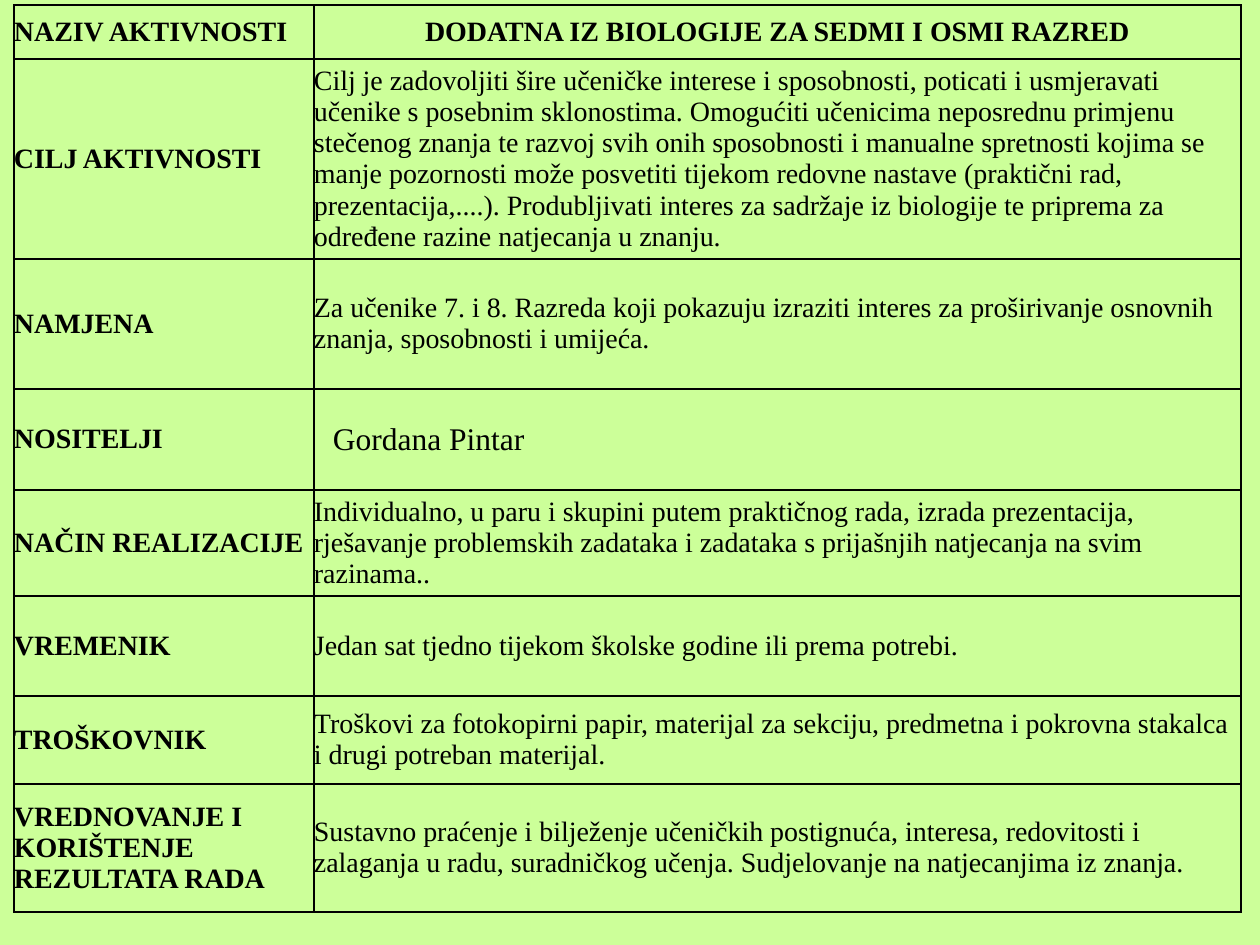
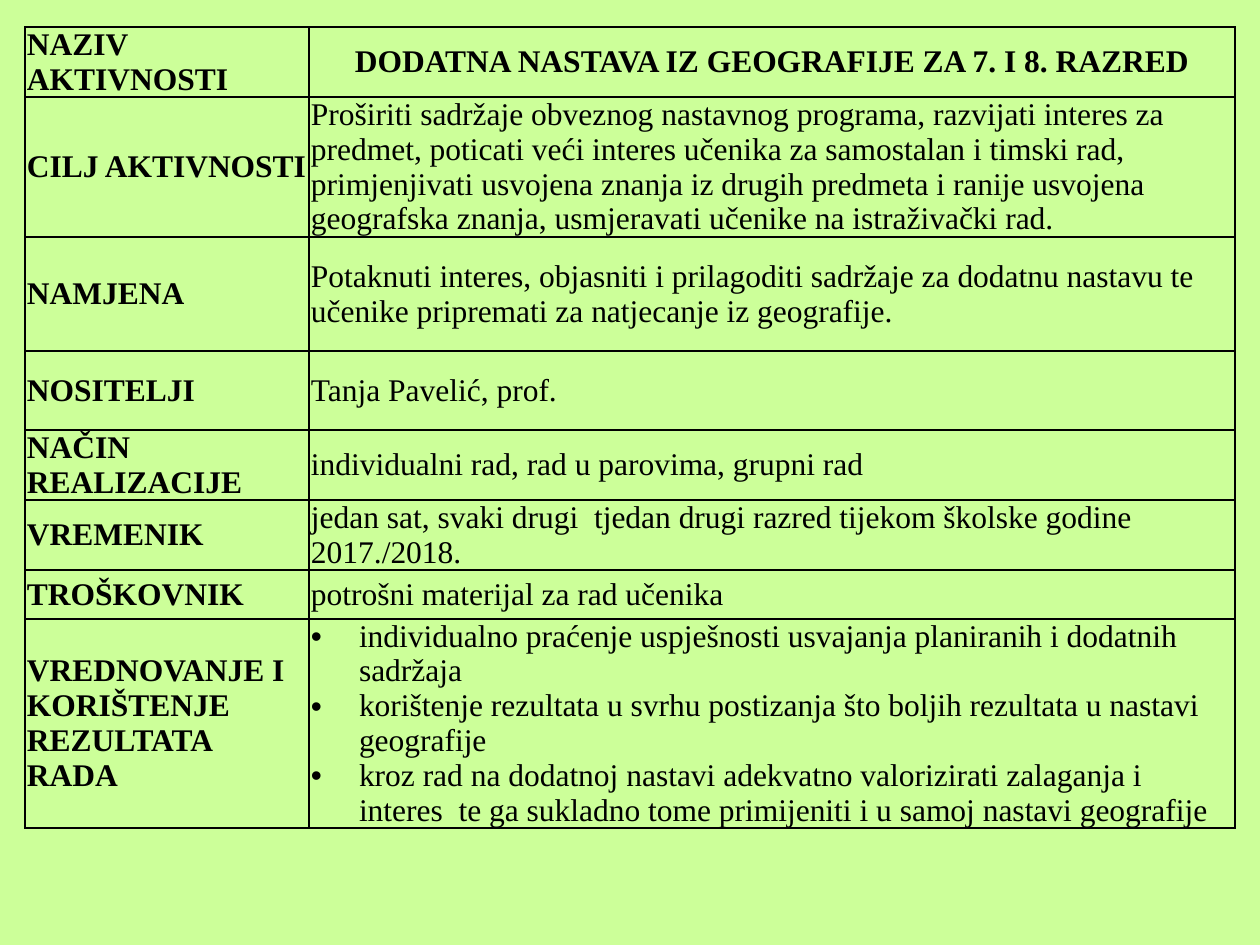
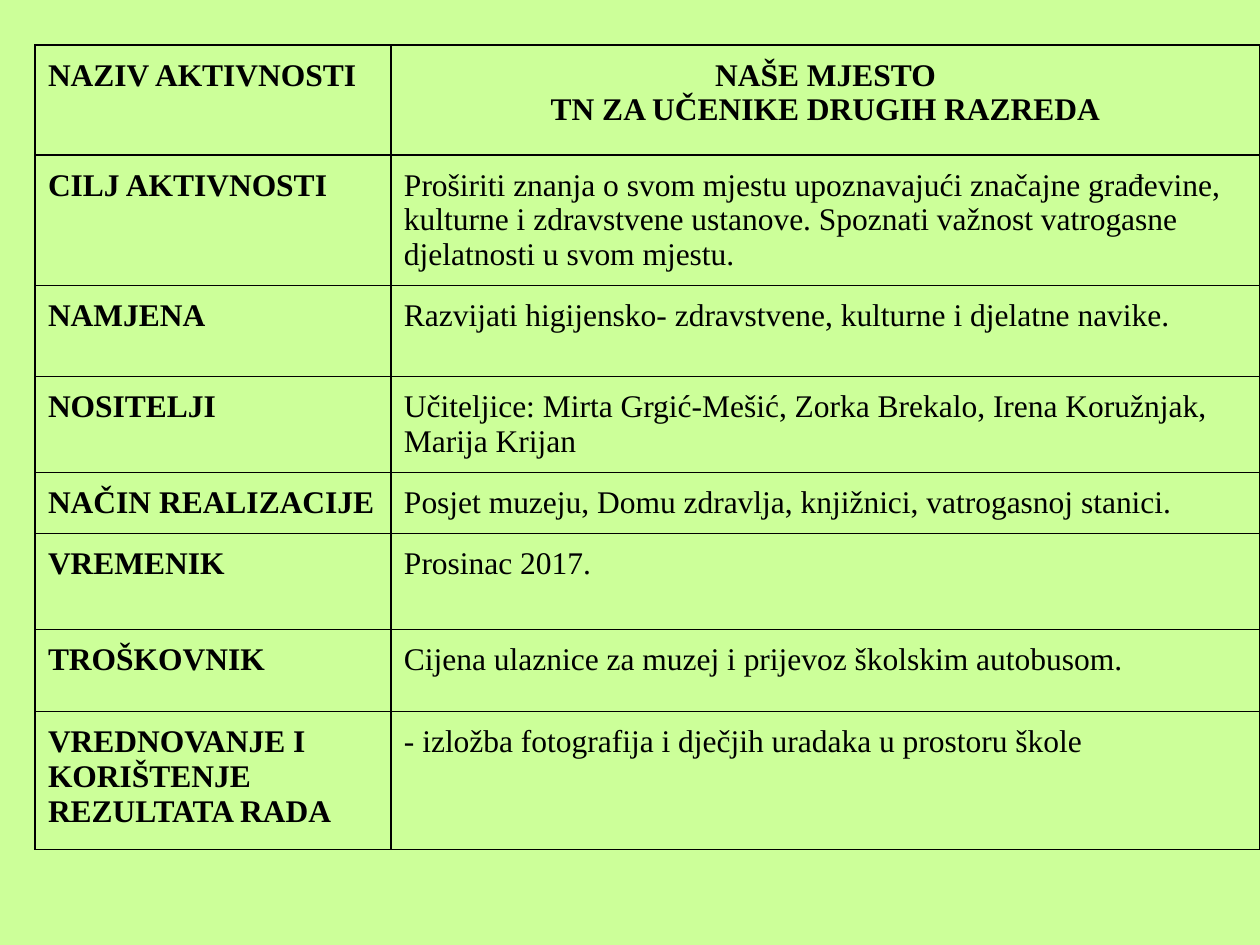
import pptx
import pptx.util
import pptx.dml.color
import pptx.enum.text
import pptx.oxml
import pptx.oxml.ns
from lxml import etree

SCALE = 914400 / 126
FONT = "Times New Roman"
HUES = {"back": "CCFF99", "ink": "000000"}
MID = pptx.enum.text.MSO_ANCHOR.MIDDLE
TOP = pptx.enum.text.MSO_ANCHOR.TOP
HEADS = [
    "NAZIV AKTIVNOSTI", "CILJ AKTIVNOSTI", "NAMJENA", "NOSITELJI",
    "NAČIN REALIZACIJE", "VREMENIK", "TROŠKOVNIK",
    "VREDNOVANJE I KORIŠTENJE REZULTATA RADA",
]
PLANS = [
    {
        "at": (14, 5), "cols": (300, 927), "pad": (0, 6), "size": 16,
        "line": 1, "anchor": MID,
        "rows": (54, 200, 130, 101, 106, 100, 88, 128),
        "big": {3: (18, 19)}, "list": None,
        "texts": [
            ["DODATNA IZ BIOLOGIJE ZA SEDMI I OSMI RAZRED"],
            ["Cilj je zadovoljiti šire učeničke interese i sposobnosti, poticati i "
             "usmjeravati učenike s posebnim sklonostima. Omogućiti učenicima "
             "neposrednu primjenu stečenog znanja te razvoj svih onih sposobnosti i "
             "manualne spretnosti kojima se manje pozornosti može posvetiti tijekom "
             "redovne nastave (praktični rad, prezentacija,....). Produbljivati "
             "interes za sadržaje iz biologije te priprema za određene razine "
             "natjecanja u znanju."],
            ["Za učenike 7. i 8. Razreda koji pokazuju izraziti interes za "
             "proširivanje osnovnih znanja, sposobnosti i umijeća."],
            ["Gordana Pintar"],
            ["Individualno, u paru i skupini putem praktičnog rada, izrada "
             "prezentacija, rješavanje problemskih zadataka i zadataka s prijašnjih "
             "natjecanja na svim razinama.."],
            ["Jedan sat tjedno tijekom školske godine ili prema potrebi."],
            ["Troškovi za fotokopirni papir, materijal za sekciju, predmetna i "
             "pokrovna stakalca i drugi potreban materijal."],
            ["Sustavno praćenje i bilježenje učeničkih postignuća, interesa, "
             "redovitosti i zalaganja u radu, suradničkog učenja. Sudjelovanje na "
             "natjecanjima iz znanja."],
        ],
    },
    {
        "at": (25, 27), "cols": (284, 926), "pad": (2, 0), "size": 18,
        "line": 1, "anchor": MID,
        "rows": (70, 140, 114, 79, 70, 70, 49, 209),
        "big": {}, "list": 7,
        "texts": [
            ["DODATNA NASTAVA IZ GEOGRAFIJE ZA 7. I 8. RAZRED"],
            ["Proširiti sadržaje obveznog nastavnog programa, razvijati interes za "
             "predmet, poticati veći interes učenika za samostalan i timski rad, "
             "primjenjivati usvojena znanja iz drugih predmeta i ranije usvojena "
             "geografska znanja, usmjeravati učenike na istraživački rad."],
            ["Potaknuti interes, objasniti i prilagoditi sadržaje za dodatnu nastavu "
             "te učenike pripremati za natjecanje iz geografije."],
            ["Tanja Pavelić, prof."],
            ["individualni rad, rad u parovima, grupni rad"],
            ["jedan sat, svaki drugi  tjedan drugi razred tijekom školske godine "
             "2017./2018."],
            ["potrošni materijal za rad učenika"],
            ["individualno praćenje uspješnosti usvajanja planiranih i dodatnih "
             "sadržaja",
             "korištenje rezultata u svrhu postizanja što boljih rezultata u nastavi "
             "geografije",
             "kroz rad na dodatnoj nastavi adekvatno valorizirati zalaganja i "
             "interes  te ga sukladno tome primijeniti i u samoj nastavi geografije"],
        ],
    },
    {
        "at": (35, 45), "cols": (356, 869), "pad": (13, 13), "size": 18,
        "line": 0.75, "anchor": TOP,
        "rows": (110, 129, 91, 95, 60, 96, 82, 138),
        "big": {}, "list": None,
        "texts": [
            ["NAŠE MJESTO", "TN ZA UČENIKE DRUGIH RAZREDA"],
            ["Proširiti znanja o svom mjestu upoznavajući značajne građevine, "
             "kulturne i zdravstvene ustanove. Spoznati važnost vatrogasne "
             "djelatnosti u svom mjestu."],
            ["Razvijati higijensko- zdravstvene, kulturne i djelatne navike."],
            ["Učiteljice: Mirta Grgić-Mešić, Zorka Brekalo, Irena Koružnjak, Marija "
             "Krijan"],
            ["Posjet muzeju, Domu zdravlja, knjižnici, vatrogasnoj stanici."],
            ["Prosinac 2017."],
            ["Cijena ulaznice za muzej i prijevoz školskim autobusom."],
            ["- izložba fotografija i dječjih uradaka u prostoru škole"],
        ],
    },
]


def px(num):
    return pptx.util.Emu(round(num * SCALE))


def add(node, tag, **attrs):
    return etree.SubElement(node, pptx.oxml.ns.qn(tag), **attrs)


deck = pptx.Presentation()
deck.slide_width = px(1260)
deck.slide_height = px(945)

for plan in PLANS:
    slide = deck.slides.add_slide(deck.slide_layouts[6])
    slide.background.fill.solid()
    slide.background.fill.fore_color.rgb = pptx.dml.color.RGBColor.from_string(HUES["back"])
    left, top = plan["at"]
    frame = slide.shapes.add_table(
        len(HEADS), 2, px(left), px(top), px(sum(plan["cols"])), px(sum(plan["rows"])))
    table = frame.table
    table.first_row = False
    table.horz_banding = False
    for col, wide in zip(table.columns, plan["cols"]):
        col.width = px(wide)
    for row, high in zip(table.rows, plan["rows"]):
        row.height = px(high)

    for r, pair in enumerate(zip(HEADS, plan["texts"])):
        for c, lines in enumerate(([pair[0]], pair[1])):
            cell = table.cell(r, c)
            cell.margin_left = cell.margin_right = px(plan["pad"][0])
            cell.margin_top = cell.margin_bottom = px(plan["pad"][1])
            cell.vertical_anchor = plan["anchor"]
            props = cell._tc.get_or_add_tcPr()
            for side in ("a:lnL", "a:lnR", "a:lnT", "a:lnB"):
                edge = add(props, side, w=str(pptx.util.Pt(plan["line"])))
                add(add(edge, "a:solidFill"), "a:srgbClr", val=HUES["ink"])
            cell.fill.background()

            size, indent = plan["size"], 0
            if c == 1:
                size, indent = plan["big"].get(r, (size, indent))
            for n, line in enumerate(lines):
                body = cell.text_frame
                para = body.add_paragraph() if n else body.paragraphs[0]
                form = para._p.get_or_add_pPr()
                if indent:
                    form.set("marL", str(px(indent)))
                if c == 1 and r == plan["list"]:
                    form.set("marL", str(px(48)))
                    form.set("indent", str(px(-48)))
                    add(add(form, "a:buClr"), "a:srgbClr", val=HUES["ink"])
                    add(form, "a:buFont", typeface="Arial")
                    add(form, "a:buChar", char="•")
                if c == 1 and r == 0:
                    para.alignment = pptx.enum.text.PP_ALIGN.CENTER
                run = para.add_run()
                run.text = line
                run.font.name = FONT
                run.font.size = pptx.util.Pt(size)
                run.font.bold = c == 0 or r == 0
                run.font.color.rgb = pptx.dml.color.RGBColor.from_string(HUES["ink"])

deck.save("out.pptx")
